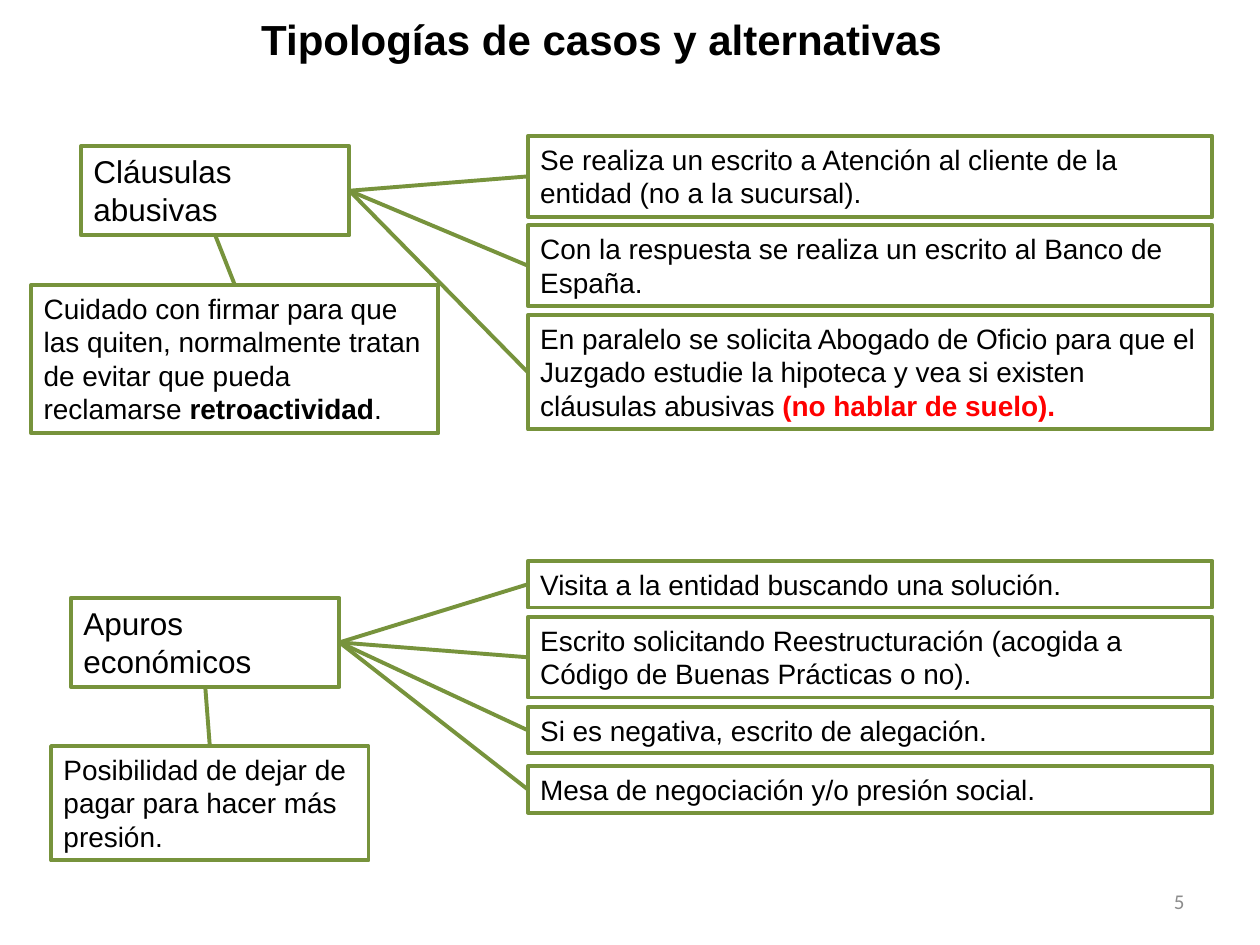
from pptx import Presentation
from pptx.dml.color import RGBColor
from pptx.enum.shapes import MSO_CONNECTOR
from pptx.enum.text import MSO_ANCHOR, MSO_AUTO_SIZE, PP_ALIGN
from pptx.oxml.ns import qn
from pptx.util import Pt
from lxml import etree

STRAIGHT = MSO_CONNECTOR.STRAIGHT
TOP, MIDDLE = MSO_ANCHOR.TOP, MSO_ANCHOR.MIDDLE
GROW, FIXED = MSO_AUTO_SIZE.SHAPE_TO_FIT_TEXT, MSO_AUTO_SIZE.NONE
LEFT, CENTER, RIGHT = PP_ALIGN.LEFT, PP_ALIGN.CENTER, PP_ALIGN.RIGHT

GREEN, BLACK, GRAY, RED = "77933C", "000000", "8C8C8C", "FF0000"
LINE_WIDTH = 2.25
# Connection sites of a rectangle
SITE_TOP, SITE_LEFT, SITE_BOTTOM, SITE_RIGHT = range(4)
# Column of action boxes
ACTION_LEFT, ACTION_WIDTH = 301.6, 391.2

# Each case: (text, left, top), (warning spans, left, top, width, lines),
# and actions as (spans, top, lines)
CASES = [
    (
        ("Cláusulas abusivas", 46.3, 83.5),
        ([("Cuidado con firmar para que las quiten, normalmente tratan "
           "de evitar que pueda reclamarse ", {}),
          ("retroactividad", {"bold": True}), (".", {})],
         17.9, 162.9, 232.6, 4),
        [
            ([("Se realiza un escrito a Atención al cliente de la entidad "
               "(no a la sucursal).", {})], 77.8, 2),
            ([("Con la respuesta se realiza un escrito al Banco de España.",
               {})], 128.8, 2),
            ([("En paralelo se solicita Abogado de Oficio para que el Juzgado "
               "estudie la hipoteca y vea si existen cláusulas abusivas", {}),
              (" (no hablar de suelo).", {"color": RED, "bold": True})],
             180, 3),
        ],
    ),
    (
        ("Apuros económicos", 40.6, 341.6),
        ([("Posibilidad de dejar de pagar para hacer más presión.", {})],
         29.2, 426.3, 181.4, 3),
        [
            ([("Visita a la entidad buscando una solución.", {})], 320.6, 1),
            ([("Escrito solicitando Reestructuración (acogida a Código de "
               "Buenas Prácticas o no).", {})], 352.6, 2),
            ([("Si es negativa, escrito de alegación.", {})], 404, 1),
            ([("Mesa de negociación y/o presión social.", {})], 437.8, 1),
        ],
    ),
]


def rgb(color):
    return RGBColor.from_string(color)


def text_height(lines):
    """Height of a box that holds the given number of 16-point lines."""
    return 7.2 + 19.4 * lines


def add_span(para, text, size=16, font="Arial", color=BLACK, bold=False):
    span = para.add_run()
    span.text = text
    span.font.size = Pt(size)
    span.font.name = font
    span.font.bold = bold
    span.font.color.rgb = rgb(color)


def add_box(page, spans, left, top, width, height, border=None, align=LEFT,
            anchor=TOP, wrap=True, fit=GROW):
    box = page.shapes.add_textbox(Pt(left), Pt(top), Pt(width), Pt(height))
    frame = box.text_frame
    frame.word_wrap = wrap
    frame.auto_size = fit
    frame.vertical_anchor = anchor
    if border:
        box.line.color.rgb = rgb(border)
        box.line.width = Pt(LINE_WIDTH)
    para = frame.paragraphs[0]
    para.alignment = align
    for text, style in spans:
        add_span(para, text, **style)
    return box


def connect(page, start, start_site, end, end_site):
    link = page.shapes.add_connector(STRAIGHT, 0, 0, 0, 0)
    link.begin_connect(start, start_site)
    link.end_connect(end, end_site)
    link.line.color.rgb = rgb(GREEN)
    link.line.width = Pt(LINE_WIDTH)
    properties = link._element.find(qn("p:spPr"))
    etree.SubElement(properties, qn("a:effectLst"))


def add_case(page, heading, warning, actions):
    # Case heading
    text, left, top = heading
    case = add_box(page, [(text, {"size": 18})], left, top, 153.4, 51,
                   border=GREEN)

    # Warning below the heading
    spans, left, top, width, lines = warning
    note = add_box(page, spans, left, top, width, text_height(lines),
                   border=GREEN)
    connect(page, case, SITE_BOTTOM, note, SITE_TOP)

    # Actions to the right
    for spans, top, lines in actions:
        action = add_box(page, spans, ACTION_LEFT, top, ACTION_WIDTH,
                         text_height(lines), border=GREEN)
        connect(page, case, SITE_RIGHT, action, SITE_LEFT)


def main():
    deck = Presentation()
    deck.slide_width, deck.slide_height = Pt(720), Pt(540)
    page = deck.slides.add_slide(deck.slide_layouts[6])

    # Page number and title
    number_style = {"size": 12, "font": "Calibri", "color": GRAY}
    add_box(page, [("5", number_style)], 516, 500.5, 168, 28.8,
            align=RIGHT, anchor=MIDDLE, fit=FIXED)
    title_style = {"size": 24, "bold": True}
    add_box(page, [("Tipologías de casos y alternativas", title_style)],
            140.4, 4.3, 406.8, 36.3, align=CENTER, wrap=False)

    # Cases with their alternatives
    for heading, warning, actions in CASES:
        add_case(page, heading, warning, actions)

    deck.save("out.pptx")


if __name__ == "__main__":
    main()
